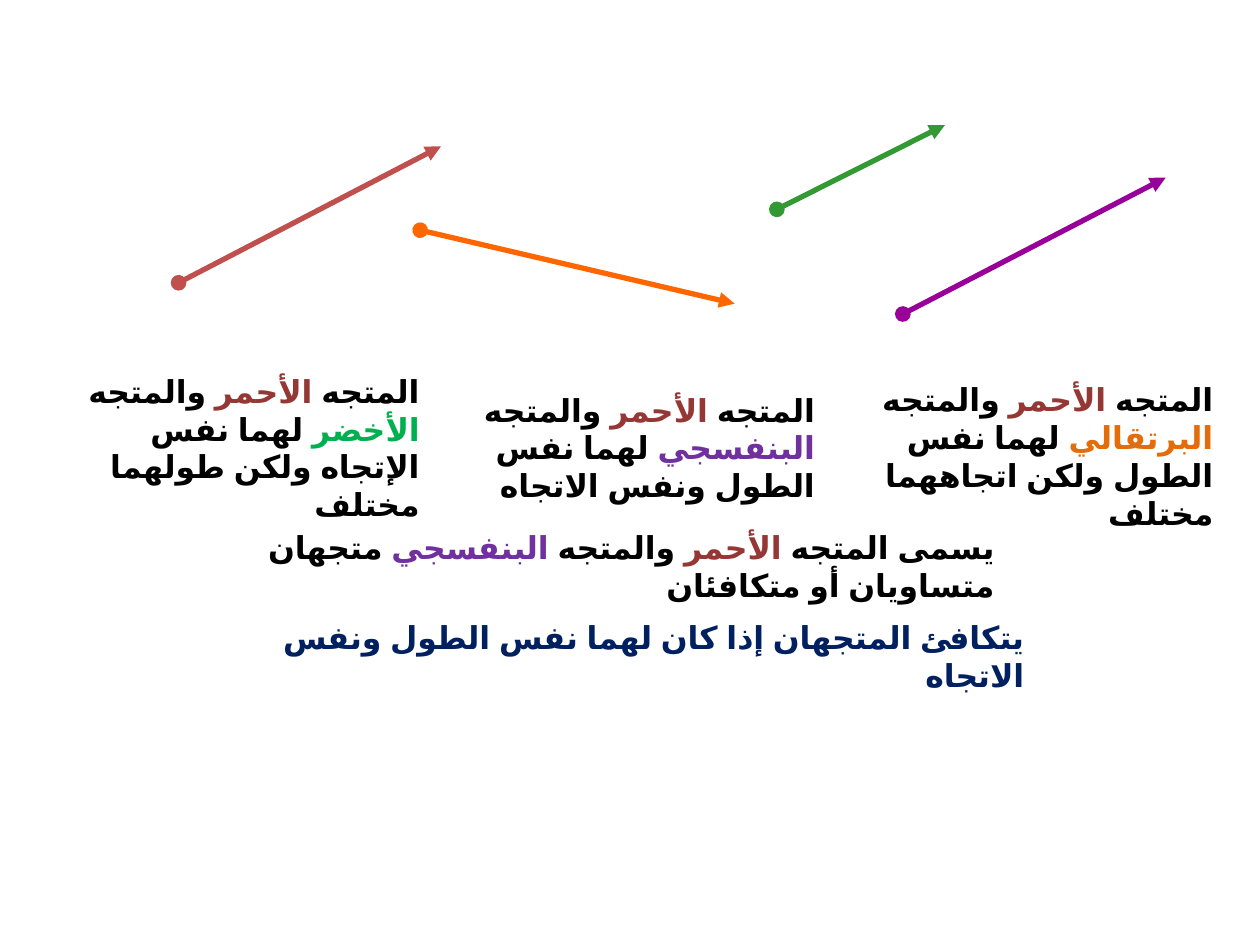
from dataclasses import dataclass

from lxml.etree import SubElement
from pptx import Presentation
from pptx.dml.color import RGBColor
from pptx.enum.lang import MSO_LANGUAGE_ID
from pptx.enum.shapes import MSO_CONNECTOR
from pptx.enum.text import MSO_AUTO_SIZE, PP_ALIGN
from pptx.oxml.ns import qn
from pptx.slide import Slide
from pptx.util import Cm, Pt

FONT = "Arial"
BLACK = "000000"
NAVY = "002060"
RED = ("الأحمر", "953735")
PURPLE = ("البنفسجي", "7030A0")
ORANGE = ("البرتقالي", "E46C0A")
GREEN = ("الأخضر", "00B050")


@dataclass(frozen=True)
class Vector:
    start: tuple[float, float]
    end: tuple[float, float]
    color: str


@dataclass(frozen=True)
class Statement:
    left: float
    top: float
    width: float
    height: float
    runs: tuple[tuple[str, str], ...]


def compare_with_red(other: tuple[str, str], ending: str, opening: str = "المتجه ") -> tuple[tuple[str, str], ...]:
    return (opening, BLACK), RED, (" والمتجه ", BLACK), other, (ending, BLACK)


VECTORS = (
    Vector((3.6, 5.7), (8.89, 2.95), "C0504D"),
    Vector((18.2, 6.33), (23.5, 3.58), "990099"),
    Vector((15.66, 4.22), (19.05, 2.52), "339933"),
    Vector((8.47, 4.64), (14.81, 6.12), "FF6600"),
)

STATEMENTS = (
    Statement(16.89, 7.54, 7.82, 2.57, compare_with_red(ORANGE, " لهما نفس الطول ولكن اتجاههما مختلف")),
    Statement(8.86, 7.75, 7.82, 1.8, compare_with_red(PURPLE, " لهما نفس الطول ونفس الاتجاه")),
    Statement(0.89, 7.37, 7.82, 2.57, compare_with_red(GREEN, " لهما نفس الإتجاه ولكن طولهما مختلف")),
    Statement(4.7, 10.52, 15.6, 1.02, compare_with_red(PURPLE, " متجهان متساويان أو متكافئان", "يسمى المتجه ")),
    Statement(3.91, 12.34, 16.99, 1.02, (("يتكافئ المتجهان إذا كان لهما نفس الطول ونفس الاتجاه", NAVY),)),
)


def hex_color(value: str) -> RGBColor:
    return RGBColor.from_string(value)


def draw_vector(slide: Slide, vector: Vector) -> None:
    points = (Cm(value) for value in vector.start + vector.end)
    connector = slide.shapes.add_connector(MSO_CONNECTOR.STRAIGHT, *points)
    connector.line.color.rgb = hex_color(vector.color)
    connector.line.width = Pt(3)
    properties = connector._element.spPr
    line = properties.find(qn("a:ln"))
    SubElement(line, qn("a:headEnd"), type="oval")
    SubElement(line, qn("a:tailEnd"), type="triangle")
    SubElement(properties, qn("a:effectLst"))


def add_run(paragraph, text: str, *, color: str, size: float = 18, bold: bool = True) -> None:
    run = paragraph.add_run()
    run.text = text
    run.font.name = FONT
    run.font.size = Pt(size)
    run.font.bold = bold
    run.font.language_id = MSO_LANGUAGE_ID.ARABIC
    run.font.color.rgb = hex_color(color)
    SubElement(run.font._element, qn("a:cs"), typeface=FONT)


def draw_statement(slide: Slide, statement: Statement) -> None:
    shape = slide.shapes.add_textbox(
        Cm(statement.left), Cm(statement.top), Cm(statement.width), Cm(statement.height)
    )
    frame = shape.text_frame
    frame.word_wrap = True
    frame.auto_size = MSO_AUTO_SIZE.SHAPE_TO_FIT_TEXT
    paragraph = frame.paragraphs[0]
    paragraph.alignment = PP_ALIGN.RIGHT
    paragraph._element.get_or_add_pPr().set("rtl", "1")
    for text, color in statement.runs:
        add_run(paragraph, text, color=color)


def main() -> None:
    presentation = Presentation()
    presentation.slide_width = Cm(25.4)
    presentation.slide_height = Cm(19.05)
    slide = presentation.slides.add_slide(presentation.slide_layouts[6])
    for vector in VECTORS:
        draw_vector(slide, vector)
    for statement in STATEMENTS:
        draw_statement(slide, statement)
    presentation.save("out.pptx")


if __name__ == "__main__":
    main()
